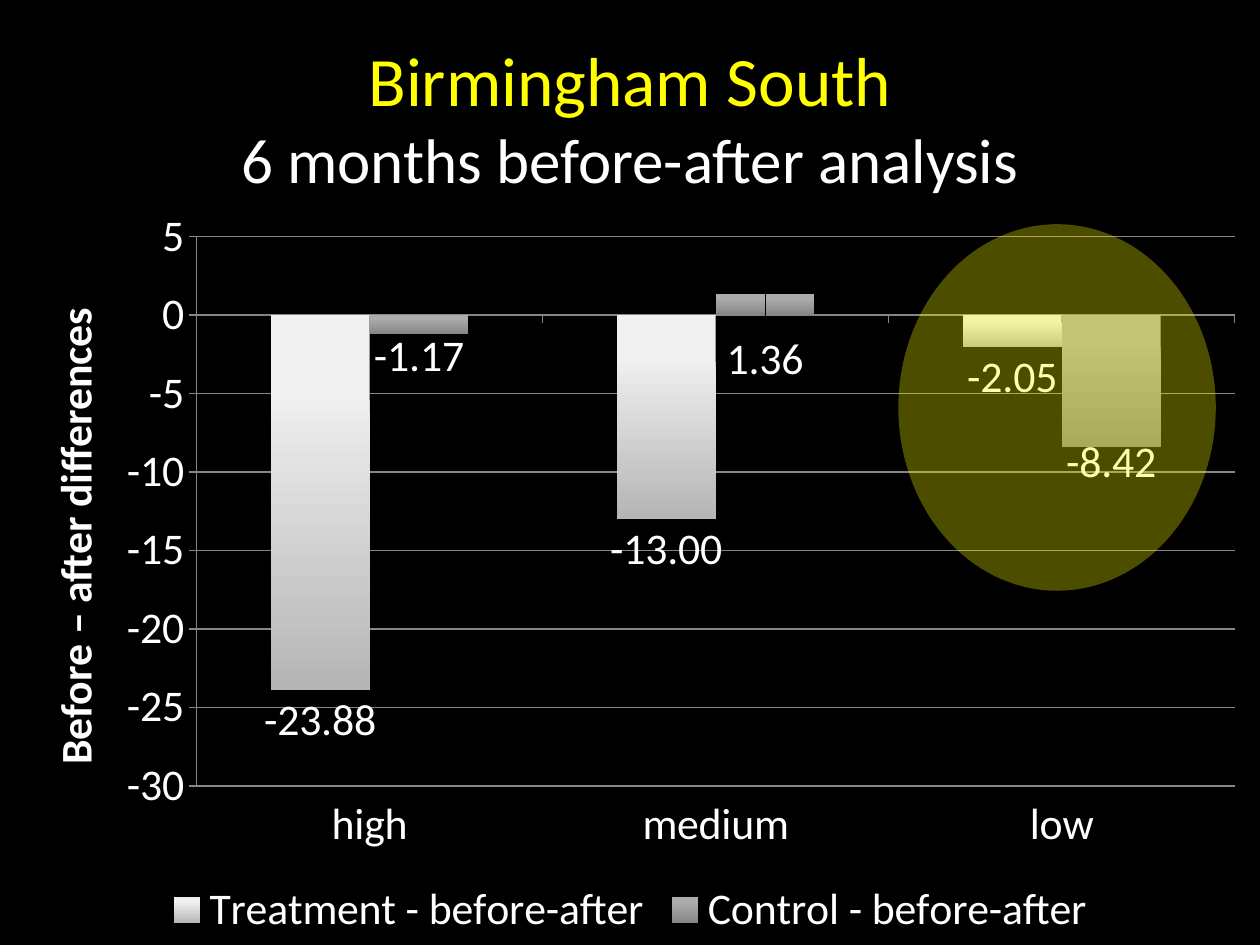
import dataclasses

import lxml.etree
import pptx
import pptx.chart.data
import pptx.dml.color
import pptx.enum.chart
import pptx.enum.shapes
import pptx.enum.text
import pptx.oxml.ns
import pptx.util

Cm, Pt = pptx.util.Cm, pptx.util.Pt
qn = pptx.oxml.ns.qn
RGB = pptx.dml.color.RGBColor.from_string
LABEL_FORMAT = "#,##0.00"


@dataclasses.dataclass(frozen=True)
class Theme:
    font: str = "Calibri"
    background: str = "000000"
    text: str = "FFFFFF"
    accent: str = "FFFF00"
    grid: str = "868686"
    title_size: float = 39.6
    subtitle_size: float = 36
    chart_size: float = 25


@dataclasses.dataclass(frozen=True)
class Series:
    name: str
    values: tuple[float, ...]
    top_color: str
    bottom_color: str
    label_shifts: tuple[float, ...] = ()


THEME = Theme()
CATEGORIES = ("high", "medium", "low")
SERIES = (
    Series("Treatment - before-after", (-23.88, -13, -2.05), "F0F0F0", "B5B5B5"),
    Series("Control - before-after", (-1.17, 1.36, -8.42), "ACACAC", "868686",
           (-0.01, 0.13, -0.02)),
)


def apply(target: object, values: dict) -> None:
    for name, value in values.items():
        setattr(target, name, value)


def style_font(font, size: float, color: str = THEME.text, bold: bool = False) -> None:
    apply(font, {"name": THEME.font, "size": Pt(size), "bold": bold})
    font.color.rgb = RGB(color)


def set_layout(parent, index: int, **values: object) -> None:
    """Give a chart part a manual layout, in fractions of the chart."""
    for old in parent.findall(qn("c:layout")):
        parent.remove(old)
    layout = parent.makeelement(qn("c:layout"))
    manual = lxml.etree.SubElement(layout, qn("c:manualLayout"))
    for name, value in values.items():
        lxml.etree.SubElement(manual, qn(f"c:{name}")).set("val", str(value))
    parent.insert(index, layout)


def add_title(slide) -> None:
    box = slide.shapes.add_textbox(Cm(1.27), Cm(0.76), Cm(22.86), Cm(3.18))
    apply(box.text_frame, {"word_wrap": True,
                           "vertical_anchor": pptx.enum.text.MSO_ANCHOR.MIDDLE})
    paragraph = box.text_frame.paragraphs[0]
    paragraph.alignment = pptx.enum.text.PP_ALIGN.CENTER
    heading = paragraph.add_run()
    heading.text = "Birmingham South"
    style_font(heading.font, THEME.title_size, THEME.accent)
    paragraph.add_line_break()
    subtitle = paragraph.add_run()
    subtitle.text = "6 months before-after analysis"
    style_font(subtitle.font, THEME.subtitle_size)


def style_axes(chart) -> None:
    value_axis, category_axis = chart.value_axis, chart.category_axis
    apply(value_axis, {"minimum_scale": -30, "maximum_scale": 5, "major_unit": 5,
                       "has_major_gridlines": True, "has_title": True})
    category_axis.tick_label_position = pptx.enum.chart.XL_TICK_LABEL_POSITION.LOW
    for axis in (value_axis, category_axis):
        axis.major_tick_mark = pptx.enum.chart.XL_TICK_MARK.OUTSIDE
        style_font(axis.tick_labels.font, THEME.chart_size)
    apply(value_axis.tick_labels, {"number_format": "General",
                                   "number_format_is_linked": False})
    for part in (value_axis, category_axis, value_axis.major_gridlines):
        part.format.line.color.rgb = RGB(THEME.grid)
        part.format.line.width = Pt(0.75)
    run = value_axis.axis_title.text_frame.paragraphs[0].add_run()
    run.text = "Before – after differences"
    style_font(run.font, THEME.chart_size, bold=True)
    set_layout(value_axis.axis_title._element, 1,
               xMode="edge", yMode="edge", x=0.03, y=0.14)


def style_series(plot_series, series: Series) -> None:
    plot_series.invert_if_negative = False
    fill = plot_series.format.fill
    fill.gradient()
    fill.gradient_angle = 270
    stops = zip(fill.gradient_stops, (0.2, 1), (series.top_color, series.bottom_color))
    for stop, position, color in stops:
        stop.position = position
        stop.color.rgb = RGB(color)

    outside = pptx.enum.chart.XL_LABEL_POSITION.OUTSIDE_END
    labels = plot_series.data_labels
    apply(labels, {"show_value": True, "number_format": LABEL_FORMAT,
                   "number_format_is_linked": False, "position": outside})
    style_font(labels.font, THEME.chart_size)
    for index, shift in enumerate(series.label_shifts):
        label = plot_series.points[index].data_label
        style_font(label.font, THEME.chart_size)
        label.position = outside
        element = labels._element.findall(qn("c:dLbl"))[index]
        number_format = element.makeelement(
            qn("c:numFmt"), {"formatCode": LABEL_FORMAT, "sourceLinked": "0"})
        element.insert(1, number_format)
        set_layout(element, 1, x=0, y=shift)


def add_difference_chart(slide) -> None:
    data = pptx.chart.data.CategoryChartData(number_format=LABEL_FORMAT)
    data.categories = CATEGORIES
    for series in SERIES:
        data.add_series(series.name, series.values)
    chart = slide.shapes.add_chart(
        pptx.enum.chart.XL_CHART_TYPE.COLUMN_CLUSTERED,
        Cm(0), Cm(3.94), Cm(25.4), Cm(15.11), data).chart
    apply(chart, {"has_title": False, "has_legend": True})
    style_font(chart.font, THEME.chart_size)
    apply(chart.legend, {"position": pptx.enum.chart.XL_LEGEND_POSITION.BOTTOM,
                         "include_in_layout": False})
    style_font(chart.legend.font, THEME.chart_size)
    plot = chart.plots[0]
    apply(plot, {"gap_width": 150, "overlap": 0, "vary_by_categories": False})
    style_axes(chart)
    for plot_series, series in zip(plot.series, SERIES):
        style_series(plot_series, series)
    plot_area = chart._chartSpace.find(f"{qn('c:chart')}/{qn('c:plotArea')}")
    set_layout(plot_area, 0, layoutTarget="inner", xMode="edge", yMode="edge",
               x=0.156, y=0.055, w=0.824, h=0.733)


def add_highlight(slide) -> None:
    ellipse = slide.shapes.add_shape(pptx.enum.shapes.MSO_SHAPE.OVAL,
                                     Cm(18.11), Cm(4.52), Cm(6.4), Cm(7.39))
    ellipse.shadow.inherit = False
    ellipse.line.fill.background()
    ellipse.fill.solid()
    ellipse.fill.fore_color.rgb = RGB(THEME.accent)
    color = ellipse._element.spPr.find(f"{qn('a:solidFill')}/{qn('a:srgbClr')}")
    lxml.etree.SubElement(color, qn("a:alpha")).set("val", "30000")


def main() -> None:
    presentation = pptx.Presentation()
    apply(presentation, {"slide_width": Cm(25.4), "slide_height": Cm(19.05)})
    slide = presentation.slides.add_slide(presentation.slide_layouts[6])
    slide.background.fill.solid()
    slide.background.fill.fore_color.rgb = RGB(THEME.background)
    add_difference_chart(slide)
    add_title(slide)
    add_highlight(slide)
    presentation.save("out.pptx")


if __name__ == "__main__":
    main()
